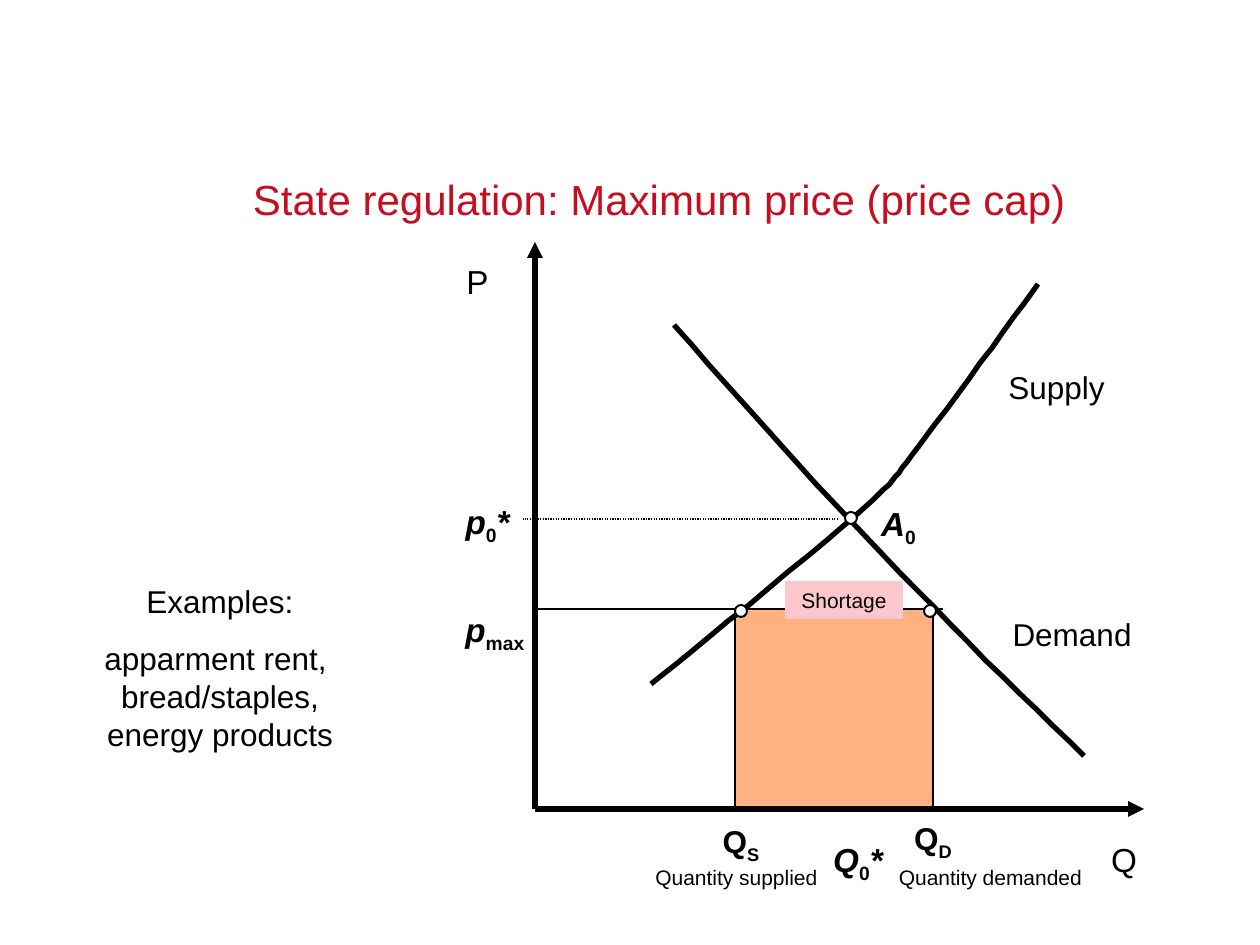
import lxml.etree
import pptx
import pptx.dml.color
import pptx.enum.dml
import pptx.enum.shapes
import pptx.enum.text
import pptx.oxml.ns
import pptx.util

UNIT = 914400 / 126
FONT = "Arial"
HUES = {"ink": "000000", "paper": "FFFFFF", "title": "C50E1F",
        "area": "FF6600", "tag": "FBC7CC"}
ALIGN = pptx.enum.text.PP_ALIGN
KIND = pptx.enum.shapes.MSO_SHAPE

DEMAND = [(674, 325), (745, 406), (816, 485), (885, 557),
          (953, 629), (1018, 692), (1084, 756)]
SUPPLY = [(651, 684), (685, 656), (810, 556), (854, 517),
          (900, 476), (888, 485), (919, 446),
          (949, 407), (1013, 318), (1038, 284)]
AXIS_X, AXIS_Y, CAP_Y, STAR_Y = 535, 809, 609, 519


def px(*nums):
    """Turn pixel lengths into EMU."""
    return [pptx.util.Emu(round(n * UNIT)) for n in nums]


def hue(name):
    """Look up a colour by name."""
    return pptx.dml.color.RGBColor.from_string(HUES[name])


def child(node, tag, **attrs):
    """Append a drawing element to a node."""
    return lxml.etree.SubElement(node, pptx.oxml.ns.qn(tag), attrs)


def pen(line, width):
    """Give a line the ink colour and a width in points."""
    line.color.rgb = hue("ink")
    line.width = pptx.util.Pt(width)


def write(para, runs, size, color="ink", align=ALIGN.CENTER):
    """Add runs of text with a style: b bold, i italic, s subscript."""
    para.alignment = align
    for text, style in runs:
        run = para.add_run()
        run.text = text
        font = run.font
        font.name, font.size = FONT, pptx.util.Pt(size)
        font.bold, font.italic = "b" in style, "i" in style
        font.color.rgb = hue(color)
        if "s" in style:
            font._element.set("baseline", "-25000")


def inset(frame, side, top):
    """Set the inner margins of a text frame in pixels."""
    frame.margin_left, frame.margin_right = px(side, side)
    frame.margin_top, frame.margin_bottom = px(top, top)


def label(slide, area, lines, size, pad=False, wrap=False):
    """Add a centred text box with one list of runs per line."""
    frame = slide.shapes.add_textbox(*px(*area)).text_frame
    frame.word_wrap = wrap
    inset(frame, *((13, 6) if pad else (0, 0)))
    for num, runs in enumerate(lines):
        para = frame.add_paragraph() if num else frame.paragraphs[0]
        write(para, runs, size)
    return frame


def block(slide, kind, area, fill, width=0):
    """Add a filled preset shape, outlined when a width is given."""
    shape = slide.shapes.add_shape(kind, *px(*area))
    shape.shadow.inherit = False
    shape.fill.solid()
    shape.fill.fore_color.rgb = hue(fill)
    if width:
        pen(shape.line, width)
    else:
        shape.line.fill.background()
    return shape


def dot(slide, x, y):
    """Add a white point marker centred on a place."""
    block(slide, KIND.OVAL, (x - 6, y - 6, 12, 12), "paper", 1.13)


def rule(slide, ends, width, dash=None, arrow=False):
    """Add a straight line, dashed or with an arrowhead."""
    kind = pptx.enum.shapes.MSO_CONNECTOR.STRAIGHT
    link = slide.shapes.add_connector(kind, *px(*ends))
    pen(link.line, width)
    if dash:
        link.line.dash_style = dash
    if arrow:
        child(link.line._get_or_add_ln(), "a:tailEnd", type="triangle")
    child(link._element.spPr, "a:effectLst")


def curve(slide, knots, steps=12):
    """Draw a chain of cubic curves as an open outline."""
    spots = []
    for num in range(0, len(knots) - 1, 3):
        for step in range(1, steps + 1):
            t = step / steps
            parts = ((1 - t) ** 3, 3 * t * (1 - t) ** 2,
                     3 * t * t * (1 - t), t ** 3)
            spots.append(tuple(sum(w * k[axis] for w, k in
                                   zip(parts, knots[num:num + 4]))
                               for axis in (0, 1)))
    path = slide.shapes.build_freeform(*knots[0], scale=UNIT)
    path.add_line_segments(spots, close=False)
    shape = path.convert_to_shape()
    shape.shadow.inherit = False
    shape.fill.background()
    pen(shape.line, 3)


def head(slide):
    """Place and format the slide title."""
    title = slide.shapes.title
    title.left, title.top, title.width, title.height = px(253, 175, 924, 49)
    frame = title.text_frame
    frame.word_wrap = True
    frame.vertical_anchor = pptx.enum.text.MSO_ANCHOR.BOTTOM
    inset(frame, 0, 0)
    para = frame.paragraphs[0]
    para.line_spacing = pptx.util.Pt(30)
    write(para, [("State regulation: Maximum price (price cap)", "")],
          24, "title", ALIGN.LEFT)


def graph(slide):
    """Draw the shortage area, curves, guides, points and axes."""
    area = block(slide, KIND.RECTANGLE, (735, CAP_Y, 198, 198), "area", 0.75)
    tint = area._element.spPr.find(".//" + pptx.oxml.ns.qn("a:srgbClr"))
    child(tint, "a:alpha", val="50000")
    curve(slide, DEMAND)
    curve(slide, SUPPLY)
    rule(slide, (838, STAR_Y, 523, STAR_Y), 0.75,
         pptx.enum.dml.MSO_LINE.ROUND_DOT)
    rule(slide, (AXIS_X, CAP_Y, 943, CAP_Y), 0.75)
    for x, y in ((851, 518), (741, 611), (930, 611)):
        dot(slide, x, y)
    for x, y in ((AXIS_X, 242), (1144, AXIS_Y)):
        rule(slide, (AXIS_X, AXIS_Y, x, y), 3, arrow=True)


def names(slide):
    """Label the axes, curves, points and quantities."""
    for area, runs in (
            ((880, 503, 37, 40), [("A", "bi"), ("0", "bs")]),
            ((466, 261, 23, 40), [("P", "")]),
            ((1111, 839, 26, 40), [("Q", "")]),
            ((832, 839, 52, 40), [("Q", "bi"), ("0", "bs"), ("*", "bi")]),
            ((465, 501, 45, 40), [("p", "bi"), ("0", "bs"), ("*", "bi")]),
            ((462, 609, 66, 40), [("p", "bi"), ("max", "bs")])):
        label(slide, area, [runs], 19)
    label(slide, (1008, 368, 97, 38), [[("Supply", "")]], 18)
    label(slide, (999, 609, 146, 50), [[("Demand", "")]], 18, pad=True)
    for x, y, sub, left, text in (
            (897, 813, "D", 876, "Quantity demanded"),
            (705, 816, "S", 622, "Quantity supplied")):
        label(slide, (x, y, 72, 50), [[("Q", "b"), (sub, "bs")]], 18,
              pad=True, wrap=True)
        label(slide, (left, 859, 229, 38), [[(text, "")]], 12,
              pad=True, wrap=True)
    tag = block(slide, KIND.RECTANGLE, (785, 581, 118, 38), "tag")
    inset(tag.text_frame, 13, 6)
    write(tag.text_frame.paragraphs[0], [("Shortage", "")], 12)


def cases(slide):
    """List the examples beside the graph."""
    lines = ("Examples:", "apparment rent, ", "bread/staples,",
             "energy products")
    frame = label(slide, (91, 576, 258, 184),
                  [[(text, "")] for text in lines], 18, pad=True)
    frame.paragraphs[1].space_before = pptx.util.Pt(11)


def main():
    """Build the slide and save it."""
    deck = pptx.Presentation()
    deck.slide_width, deck.slide_height = px(1260, 945)
    slide = deck.slides.add_slide(deck.slide_layouts[5])
    head(slide)
    graph(slide)
    names(slide)
    cases(slide)
    deck.save("out.pptx")


if __name__ == "__main__":
    main()
